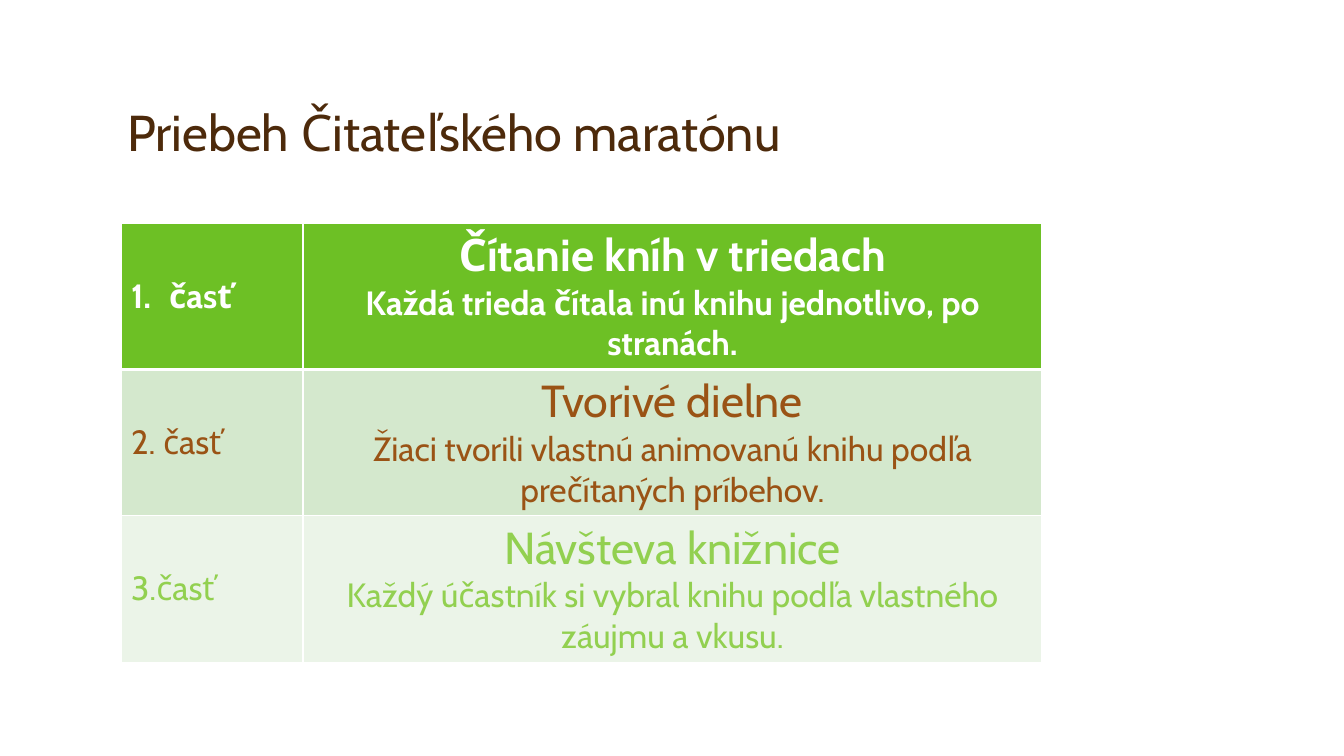
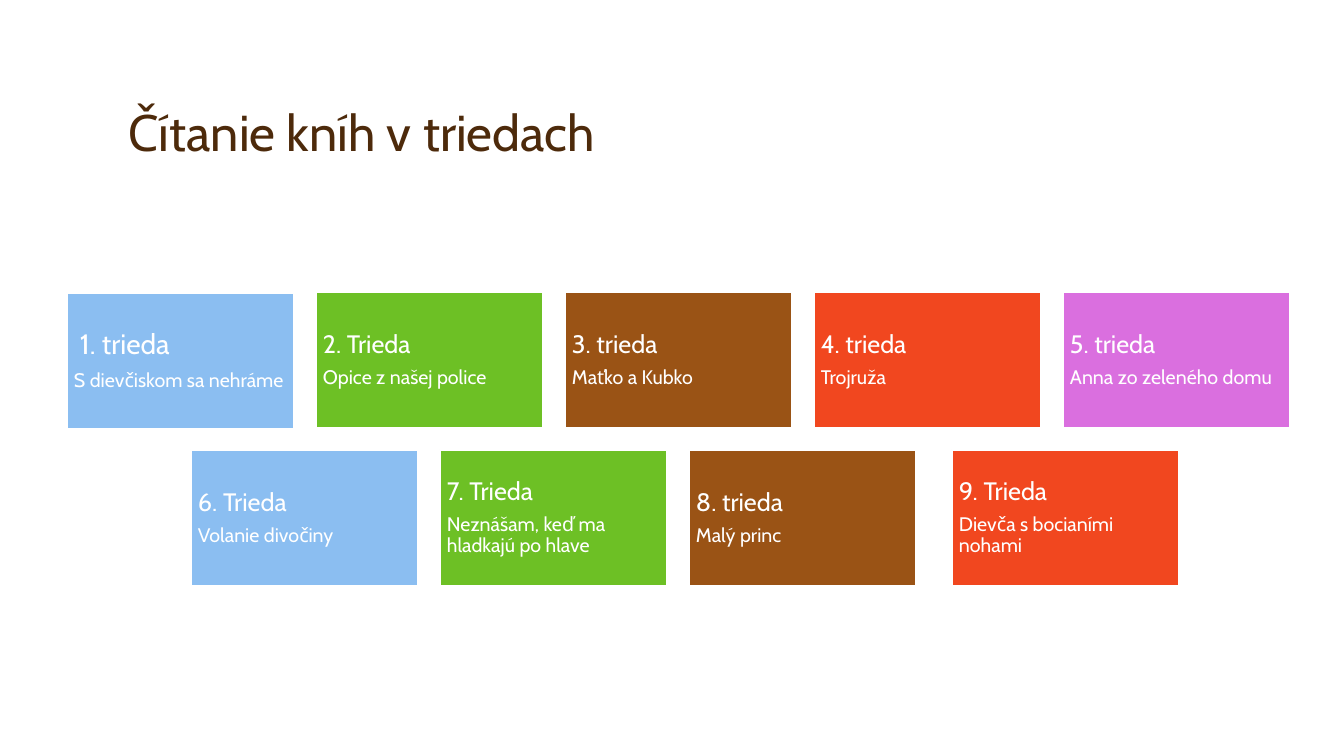
from lxml.etree import SubElement
from pptx import Presentation
from pptx.dml.color import RGBColor
from pptx.enum.shapes import MSO_SHAPE as Shape
from pptx.enum.text import MSO_ANCHOR as Anchor, MSO_AUTO_SIZE as AutoSize, PP_ALIGN as Align
from pptx.oxml.ns import qn
from pptx.util import Emu, Pt

PX_PER_INCH = 100.8
COLORS = {
    "white": "FFFFFF", "title": "4D2A0B", "blue": "8BBEF1", "green": "6DC025",
    "brown": "9A5315", "red": "F1471F", "violet": "DA6FDF", "lime": "92D050",
    "pale": "D4E8CD", "palest": "EBF4E8",
}
FONT = "Cabin"
TITLE_ONLY = 5


def px(length):
    return Emu(round(length * 914400 / PX_PER_INCH))


def rgb(name):
    return RGBColor.from_string(COLORS[name])


def set_format(target, values):
    for name, value in values.items():
        setattr(target, name, value)


class Deck:
    """Holds the shared style and the slide being built."""

    def __init__(self, width, height):
        self.prs = Presentation()
        set_format(self.prs, {"slide_width": px(width), "slide_height": px(height)})
        self.slide = None

    def add_slide(self, title, title_width):
        self.slide = self.prs.slides.add_slide(self.prs.slide_layouts[TITLE_ONLY])
        heading = self.slide.shapes.title
        set_format(heading, {"left": px(117), "top": px(33),
                             "width": px(title_width), "height": px(134)})
        set_format(heading.text_frame, {"vertical_anchor": Anchor.BOTTOM, "word_wrap": True,
                                        "auto_size": AutoSize.NONE})
        self.add_lines(heading.text_frame, [(title, 36)], "title", line_spacing=0.9)

    def add_lines(self, frame, lines, color, bold=False, after=0, **layout):
        """Fill a frame with (text, size) lines; after is a share of the text size."""
        for index, (text, size) in enumerate(lines):
            paragraph = frame.add_paragraph() if index else frame.paragraphs[0]
            set_format(paragraph, {"alignment": Align.LEFT, "space_before": Pt(0),
                                   "space_after": Pt(round(size * after)), **layout})
            run = paragraph.add_run()
            run.text = text
            set_format(run.font, {"name": FONT, "size": Pt(size), "bold": bold})
            run.font.color.rgb = rgb(color)

    def indent(self, paragraph, margin, first=0):
        properties = paragraph._p.get_or_add_pPr()
        properties.set("marL", str(px(margin)))
        properties.set("indent", str(px(first)))
        return properties

    def number(self, paragraph):
        properties = self.indent(paragraph, 38, -38)
        SubElement(properties, qn("a:buFont"), typeface=FONT)
        SubElement(properties, qn("a:buAutoNum"), type="arabicPeriod")

    def border(self, cell, **widths):
        """Draw white borders, 1 pt wide unless a side is given."""
        for side in ("L", "R", "T", "B"):
            line = SubElement(cell._tc.get_or_add_tcPr(), qn(f"a:ln{side}"),
                              w=str(Pt(widths.get(side, 1))))
            fill = SubElement(line, qn("a:solidFill"))
            SubElement(fill, qn("a:srgbClr"), val=COLORS["white"])

    def table(self, left, top, widths, row_height, rows):
        """Add (label, heading, description, text colour, fill) rows under a thick header rule."""
        frame = self.slide.shapes.add_table(len(rows), len(widths), px(left), px(top),
                                            px(sum(widths)), px(row_height * len(rows)))
        table = frame.table
        for column, width in zip(table.columns, widths):
            column.width = px(width)
        rules = {0: {"B": 3}, 1: {"T": 3}}
        for index, (label, heading, description, color, fill) in enumerate(rows):
            contents = [([(label, 24)], Align.LEFT),
                        ([(heading, 32), (description, 24)], Align.CENTER)]
            for cell, (lines, alignment) in zip(table.rows[index].cells, contents):
                self.border(cell, **rules.get(index, {}))
                cell.fill.solid()
                cell.fill.fore_color.rgb = rgb(fill)
                cell.vertical_anchor = Anchor.MIDDLE
                self.add_lines(cell.text_frame, lines, color, bold=index == 0,
                               alignment=alignment)
        return table

    def card(self, left, top, color, lines):
        box = self.slide.shapes.add_shape(Shape.RECTANGLE, px(left), px(top), px(227), px(136))
        box.shadow.inherit = False
        box.fill.solid()
        box.fill.fore_color.rgb = rgb(color)
        box.line.color.rgb = rgb("white")
        box.line.width = Pt(1)
        frame = box.text_frame
        set_format(frame, {"word_wrap": True, "vertical_anchor": Anchor.MIDDLE})
        set_format(frame, {f"margin_{side}": px(7) for side in ("left", "top", "right", "bottom")})
        self.add_lines(frame, lines, "white", after=0.35, line_spacing=0.9)
        return frame


def build_course(deck):
    deck.add_slide("Priebeh Čitateľského maratónu", 1187)
    stages = deck.table(121, 223, [182, 739], 145, [
        ("časť", "Čítanie kníh v triedach",
         "Každá trieda čítala inú knihu jednotlivo, po stranách.", "white", "green"),
        ("2. časť", "Tvorivé dielne",
         "Žiaci tvorili vlastnú animovanú knihu podľa prečítaných príbehov.", "brown", "pale"),
        ("3.časť", "Návšteva knižnice",
         "Každý účastník si vybral knihu podľa vlastného záujmu a vkusu.", "lime", "palest"),
    ])
    deck.number(stages.cell(0, 0).text_frame.paragraphs[0])


def build_classes(deck):
    deck.add_slide("Čítanie kníh v triedach", 1109)
    book_rows = [
        (67, [("1. trieda", "S dievčiskom sa nehráme"), ("2. Trieda", "Opice z našej police"),
              ("3. trieda", "Maťko a Kubko"), ("4. trieda", "Trojruža"),
              ("5. trieda", "Anna zo zeleného domu")]),
        (191, [("6. Trieda", "Volanie divočiny"),
               ("7. Trieda", "Neznášam, keď ma hladkajú po hlave"),
               ("8. trieda", "Malý princ"), ("9. Trieda", "Dievča s bocianími nohami")]),
    ]
    card_colors = ["blue", "green", "brown", "red", "violet"]
    nudges = {"1. trieda": (0, 1), "9. Trieda": (14, 0)}
    for row, (left, books) in enumerate(book_rows):
        for column, ((grade, book), color) in enumerate(zip(books, card_colors)):
            dx, dy = nudges.get(grade, (0, 0))
            opening = row == column == 0
            card = deck.card(left + 249 * column + dx, 292 + 158 * row + dy, color,
                             [(grade, 20 if opening else 18), (book, 14)])
            if opening:
                deck.indent(card.paragraphs[0], 6)


def main():
    deck = Deck(1344, 756)
    build_course(deck)
    build_classes(deck)
    deck.prs.save("out.pptx")


if __name__ == "__main__":
    main()
